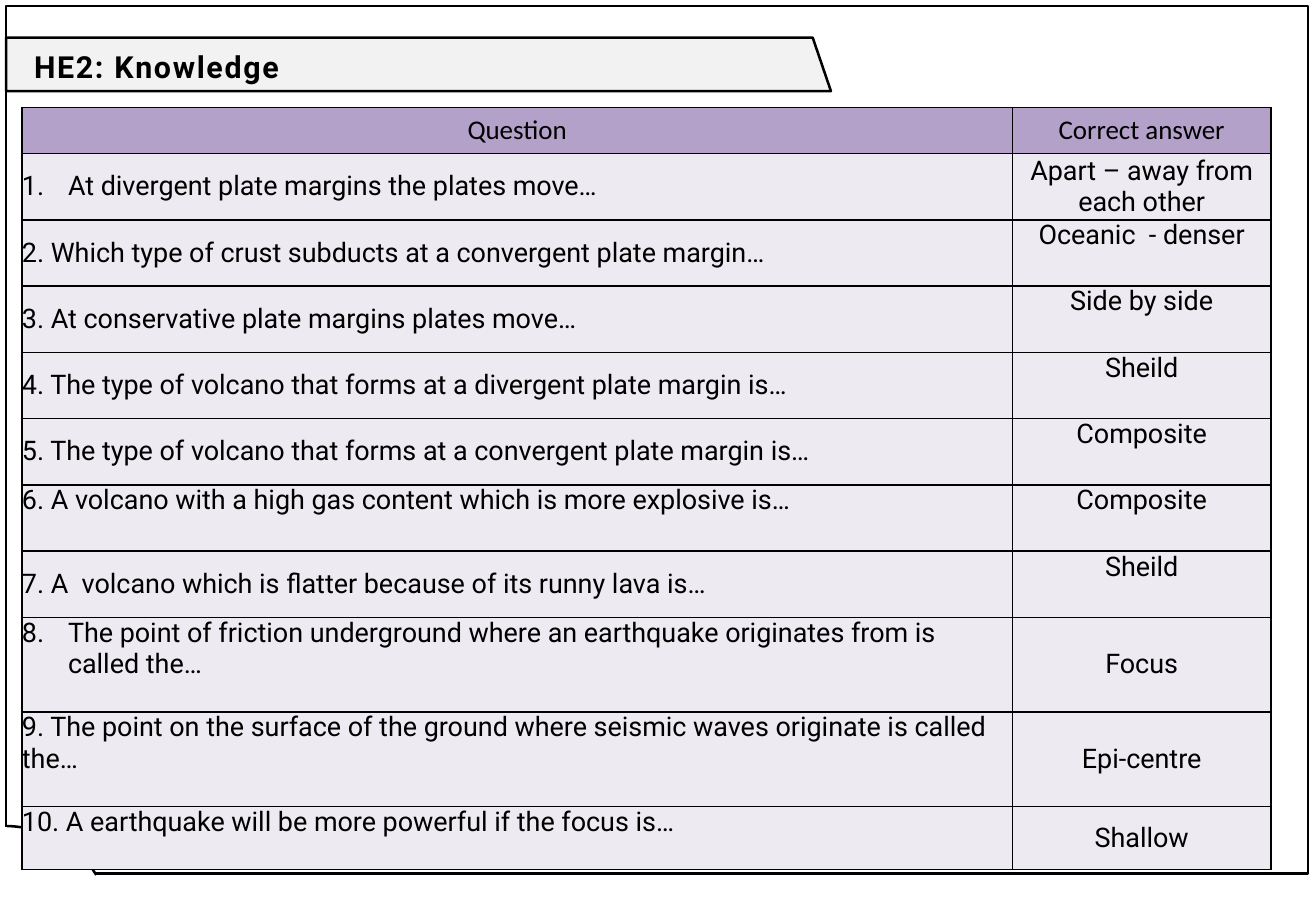
from dataclasses import dataclass
from typing import Any

from lxml.etree import SubElement
from pptx import Presentation
from pptx.dml.color import RGBColor
from pptx.enum.shapes import MSO_SHAPE
from pptx.enum.text import MSO_ANCHOR, PP_ALIGN
from pptx.oxml.ns import qn
from pptx.util import Pt

COLOURS = {"ink": "000000", "paper": "FFFFFF", "band": "F2F2F2",
           "header": "B4A1CA", "row": "EDEAF1"}
TOP, MIDDLE = MSO_ANCHOR.TOP, MSO_ANCHOR.MIDDLE
LEFT, CENTRE = PP_ALIGN.LEFT, PP_ALIGN.CENTER
COLUMN_WIDTHS = (587, 153.4)
BAND_POINTS = ((3.6, 22.3), (481.7, 22.3), (492.5, 54), (3.6, 54))
NO_MARGINS = dict.fromkeys(
    ("margin_left", "margin_right", "margin_top", "margin_bottom"), 0)


@dataclass
class QuizRow:
    question: str
    answer: str
    height: float = 39.3
    question_anchor: Any = MIDDLE
    answer_anchor: Any = TOP
    number: int = 0
    fill: str = "row"
    font: str = "Roboto"
    question_alignment: Any = LEFT


@dataclass
class BackdropShape:
    kind: Any
    box: tuple[float, float, float, float]
    fill: str = ""
    line: str = ""
    adjustments: tuple[float, ...] = ()


BACKDROP = (
    BackdropShape(MSO_SHAPE.RECTANGLE, (3.6, 3.6, 771.8, 514.1), line="ink"),
    BackdropShape(MSO_SHAPE.ARC, (-59, 489.6, 122.4, 104.4), "paper", "ink",
                  (162.53, 202.27)),
    BackdropShape(MSO_SHAPE.RECTANGLE, (0.7, 490.3, 3.6, 7.2), "paper"),
)
ROWS = (
    QuizRow("Question", "Correct answer", 27.3, answer_anchor=MIDDLE,
            fill="header", font="Calibri", question_alignment=CENTRE),
    QuizRow("At divergent plate margins the plates move…",
            "Apart – away from each other", answer_anchor=MIDDLE, number=1),
    QuizRow("2. Which type of crust subducts at a convergent plate margin…",
            "Oceanic  - denser"),
    QuizRow("3. At conservative plate margins plates move…", "Side by side"),
    QuizRow("4. The type of volcano that forms at a divergent plate margin is…",
            "Sheild"),
    QuizRow("5. The type of volcano that forms at a convergent plate margin is…",
            "Composite"),
    QuizRow("6. A volcano with a high gas content which is more explosive is…",
            "Composite", question_anchor=TOP),
    QuizRow("7. A  volcano which is flatter because of its runny lava is…",
            "Sheild"),
    QuizRow("The point of friction underground where an earthquake originates "
            "from is called the…", "Focus", 56, TOP, MIDDLE, 8),
    QuizRow("9. The point on the surface of the ground where seismic waves "
            "originate is called the…", "Epi-centre", 56, TOP, MIDDLE),
    QuizRow("10. A earthquake will be more powerful if the focus is…",
            "Shallow", 37.5, TOP, MIDDLE),
)


def colour(name: str) -> RGBColor:
    return RGBColor.from_string(COLOURS[name])


def apply_format(target: Any, values: dict[str, Any]) -> None:
    for name, value in values.items():
        setattr(target, name, value)


def paint(shape: Any, fill: str, line: str) -> None:
    shape.shadow.inherit = False
    if fill:
        shape.fill.solid()
        shape.fill.fore_color.rgb = colour(fill)
    else:
        shape.fill.background()
    if line:
        shape.line.color.rgb = colour(line)
        shape.line.width = Pt(1.5)
    else:
        shape.line.fill.background()


def draw_backdrop(slide: Any) -> None:
    points = [(Pt(x), Pt(y)) for x, y in BAND_POINTS]
    builder = slide.shapes.build_freeform(*points[0])
    builder.add_line_segments(points[1:], close=True)
    paint(builder.convert_to_shape(), "band", "ink")
    for item in BACKDROP:
        shape = slide.shapes.add_shape(item.kind, *map(Pt, item.box))
        for index, value in enumerate(item.adjustments):
            shape.adjustments[index] = value
        paint(shape, item.fill, item.line)


def write_title(slide: Any) -> None:
    title = slide.shapes.title
    slide.shapes._spTree.append(title._element)
    apply_format(title, {"left": Pt(13), "top": Pt(15.8),
                         "width": Pt(463), "height": Pt(45.4)})
    apply_format(title.text_frame, {"text": "HE2: Knowledge",
                                    "vertical_anchor": MIDDLE, "word_wrap": True})
    paragraph = title.text_frame.paragraphs[0]
    apply_format(paragraph, {"alignment": LEFT, "line_spacing": 1.07,
                             "space_after": Pt(8)})
    run = paragraph.runs[0]
    apply_format(run.font, {"name": "Roboto", "size": Pt(18), "bold": True})
    run.font.color.rgb = colour("ink")
    run._r.get_or_add_rPr().set("spc", "100")


def draw_borders(cell: Any) -> None:
    properties = cell._tc.get_or_add_tcPr()
    for position, side in enumerate(("lnL", "lnR", "lnT", "lnB")):
        border = SubElement(properties, qn(f"a:{side}"), w=str(Pt(1)))
        fill = SubElement(border, qn("a:solidFill"))
        SubElement(fill, qn("a:srgbClr"), val=COLOURS["ink"])
        properties.insert(position, border)


def write_cell(cell: Any, text: str, row: QuizRow, anchor: Any,
               alignment: Any, number: int = 0) -> None:
    apply_format(cell, {"text": text, "vertical_anchor": anchor, **NO_MARGINS})
    cell.fill.solid()
    cell.fill.fore_color.rgb = colour(row.fill)
    draw_borders(cell)
    paragraph = cell.text_frame.paragraphs[0]
    paragraph.alignment = alignment
    if number:
        properties = paragraph._p.get_or_add_pPr()
        properties.set("marL", str(Pt(27.3)))
        properties.set("indent", str(-Pt(27.3)))
        SubElement(properties, qn("a:buAutoNum"), type="arabicPeriod",
                   startAt=str(number))
    font = paragraph.runs[0].font
    apply_format(font, {"name": row.font, "size": Pt(16)})
    font.color.rgb = colour("ink")


def draw_table(slide: Any) -> None:
    height = sum(row.height for row in ROWS)
    table = slide.shapes.add_table(
        len(ROWS), len(COLUMN_WIDTHS), Pt(13), Pt(63.7),
        Pt(sum(COLUMN_WIDTHS)), Pt(height)).table
    apply_format(table, {"first_row": False, "horz_banding": False})
    for column, width in zip(table.columns, COLUMN_WIDTHS):
        column.width = Pt(width)
    for index, row in enumerate(ROWS):
        table.rows[index].height = Pt(row.height)
        write_cell(table.cell(index, 0), row.question, row,
                   row.question_anchor, row.question_alignment, row.number)
        write_cell(table.cell(index, 1), row.answer, row,
                   row.answer_anchor, CENTRE)


def main() -> None:
    """Build the knowledge quiz slide with its answers."""
    presentation = Presentation()
    apply_format(presentation, {"slide_width": Pt(780), "slide_height": Pt(540)})
    slide = presentation.slides.add_slide(presentation.slide_layouts[5])
    draw_backdrop(slide)
    write_title(slide)
    draw_table(slide)
    presentation.save("out.pptx")


if __name__ == "__main__":
    main()
